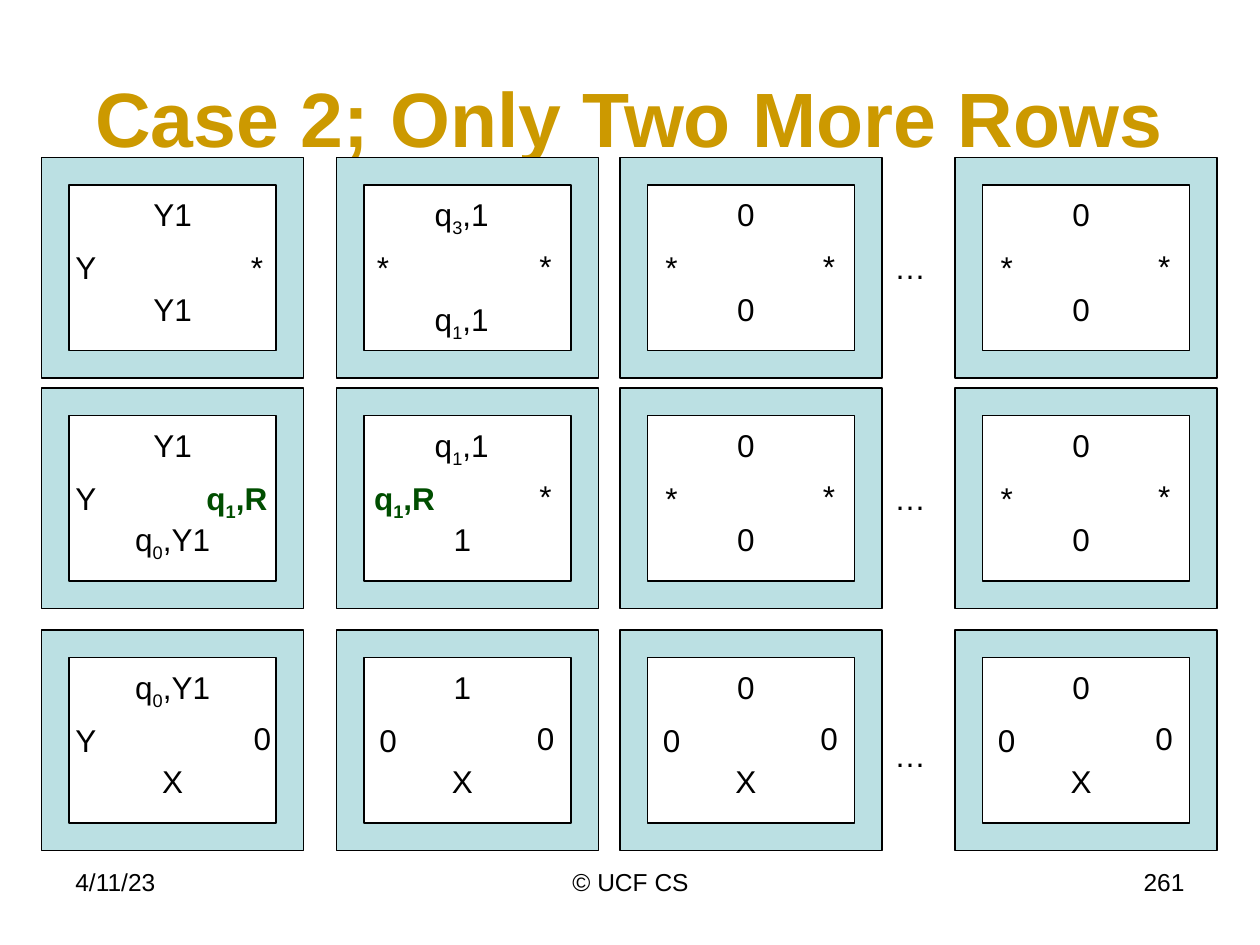
import pptx
import pptx.util
import pptx.dml.color
import pptx.enum.shapes
import pptx.enum.text

Inches = pptx.util.Inches
ALIGN = pptx.enum.text.PP_ALIGN
FIT = pptx.enum.text.MSO_AUTO_SIZE
ANCHOR = pptx.enum.text.MSO_ANCHOR

THEME = {
    "font": "Arial",
    "title": "CC9900", "ink": "000000", "move": "004E00", "frame": "BBE0E3",
    "head": 44, "body": 18, "foot": 14, "line": 0.75,
}

TITLE = "Case 2; Only Two More Rows"
FOOT = [
    ("4/11/23", 0.5, 2.33, ALIGN.LEFT),
    ("© UCF CS", 3.42, 3.17, ALIGN.CENTER),
    ("261", 7.17, 2.33, ALIGN.RIGHT),
]

SIDES = ("top", "left", "right", "low")
TILES = [
    [("Y1", "Y", "*", "Y1"), ("q_3,1", "*", "*", "q_1,1"),
     ("0", "*", "*", "0"), ("0", "*", "*", "0")],
    [("Y1", "Y", "q_1,R", "q_0,Y1"), ("q_1,1", "q_1,R", "*", "1"),
     ("0", "*", "*", "0"), ("0", "*", "*", "0")],
    [("q_0,Y1", "Y", "0", "X"), ("1", "0", "0", "X"),
     ("0", "0", "0", "X"), ("0", "0", "0", "X")],
]
MOVE = "q_1,R"

COLS = (0.33, 2.67, 4.92, 7.58)
ROWS = (1.25, 3.08, 5)
WIDE, HIGH = 2.08, 1.75
DOTS = ((7, 0.67, 0.92), (7, 0.67, 0.92), (7, 0.79, 0.5))

FIRST = {
    "top": (0.25, 0.25, 1.58, ALIGN.CENTER),
    "left": (0.17, 0.67, 0.92, ALIGN.LEFT),
    "right": (1.09, 0.67, 0.92, ALIGN.CENTER),
    "low": (0.25, 1, 1.58, ALIGN.CENTER),
}
OTHER = {
    "top": (0.41, 0.25, 1.17, ALIGN.CENTER),
    "left": (0.16, 0.67, 0.5, ALIGN.CENTER),
    "right": (1.41, 0.66, 0.5, ALIGN.CENTER),
    "low": (0.41, 1, 1.17, ALIGN.CENTER),
}
SPECIAL = {
    (0, 0, "right"): (1.25, 0.67, 0.92, ALIGN.CENTER),
    (2, 0, "right"): (1.09, 0.66, 0.83, ALIGN.RIGHT),
    (0, 1, "left"): (0.08, 0.67, 0.58, ALIGN.CENTER),
    (1, 1, "left"): (0.08, 0.67, 0.92, ALIGN.CENTER),
    (0, 1, "low"): (0.41, 1.08, 1.17, ALIGN.CENTER),
}


def tint(name):
    return pptx.dml.color.RGBColor.from_string(THEME[name])


def write(shape, text, size="body", color="ink", bold=False,
          align=ALIGN.LEFT, anchor=ANCHOR.TOP, fit=FIT.NONE):
    frame = shape.text_frame
    frame.word_wrap = True
    frame.auto_size = fit
    frame.vertical_anchor = anchor
    para = frame.paragraphs[0]
    para.alignment = align
    base, mark, rest = text.partition("_")
    for part, sub in ((base, False), (rest[:1], True), (rest[1:], False)):
        if not part:
            continue
        run = para.add_run()
        run.text = part
        run.font.name = THEME["font"]
        run.font.size = pptx.util.Pt(THEME[size])
        run.font.bold = bold
        run.font.color.rgb = tint(color)
        if sub:
            run._r.get_or_add_rPr().set("baseline", "-25000")


def box(slide, text, left, top, wide, high, **form):
    spot = slide.shapes.add_textbox(*map(Inches, (left, top, wide, high)))
    write(spot, text, **form)


def tile(slide, row, col):
    left, top = COLS[col], ROWS[row]
    frame = slide.shapes.add_shape(
        pptx.enum.shapes.MSO_SHAPE.FRAME, *map(Inches, (left, top, WIDE, HIGH)))
    frame.shadow.inherit = False
    frame.fill.solid()
    frame.fill.fore_color.rgb = tint("frame")
    frame.line.color.rgb = tint("ink")
    frame.line.width = pptx.util.Pt(THEME["line"])
    slots = FIRST if col == 0 else OTHER
    for side, text in zip(SIDES, TILES[row][col]):
        dx, dy, wide, align = SPECIAL.get((row, col, side), slots[side])
        if wide == 1.17 and len(text) == 1:
            dx, wide = 0.75, 0.5
        move = text == MOVE
        high = 0.4 if "_" in text and wide < 1.5 else 0.5
        box(slide, text, left + dx, top + dy, wide, high, align=align,
            color="move" if move else "ink", bold=move, fit=FIT.SHAPE_TO_FIT_TEXT)


def main():
    deck = pptx.Presentation()
    deck.slide_width, deck.slide_height = Inches(10), Inches(7.5)
    slide = deck.slides.add_slide(deck.slide_layouts[5])
    title = slide.shapes.title
    title.left, title.top, title.width, title.height = map(
        Inches, (0.5, 0.3, 9, 1.25))
    write(title, TITLE, size="head", color="title", bold=True,
          align=ALIGN.CENTER, anchor=ANCHOR.MIDDLE)
    for text, left, wide, align in FOOT:
        box(slide, text, left, 6.83, wide, 0.52, size="foot", align=align)
    for row, top in enumerate(ROWS):
        for col in range(len(COLS)):
            tile(slide, row, col)
        left, dy, wide = DOTS[row]
        box(slide, "…", left, top + dy, wide, 0.5, fit=FIT.SHAPE_TO_FIT_TEXT)
    deck.save("out.pptx")


if __name__ == "__main__":
    main()
